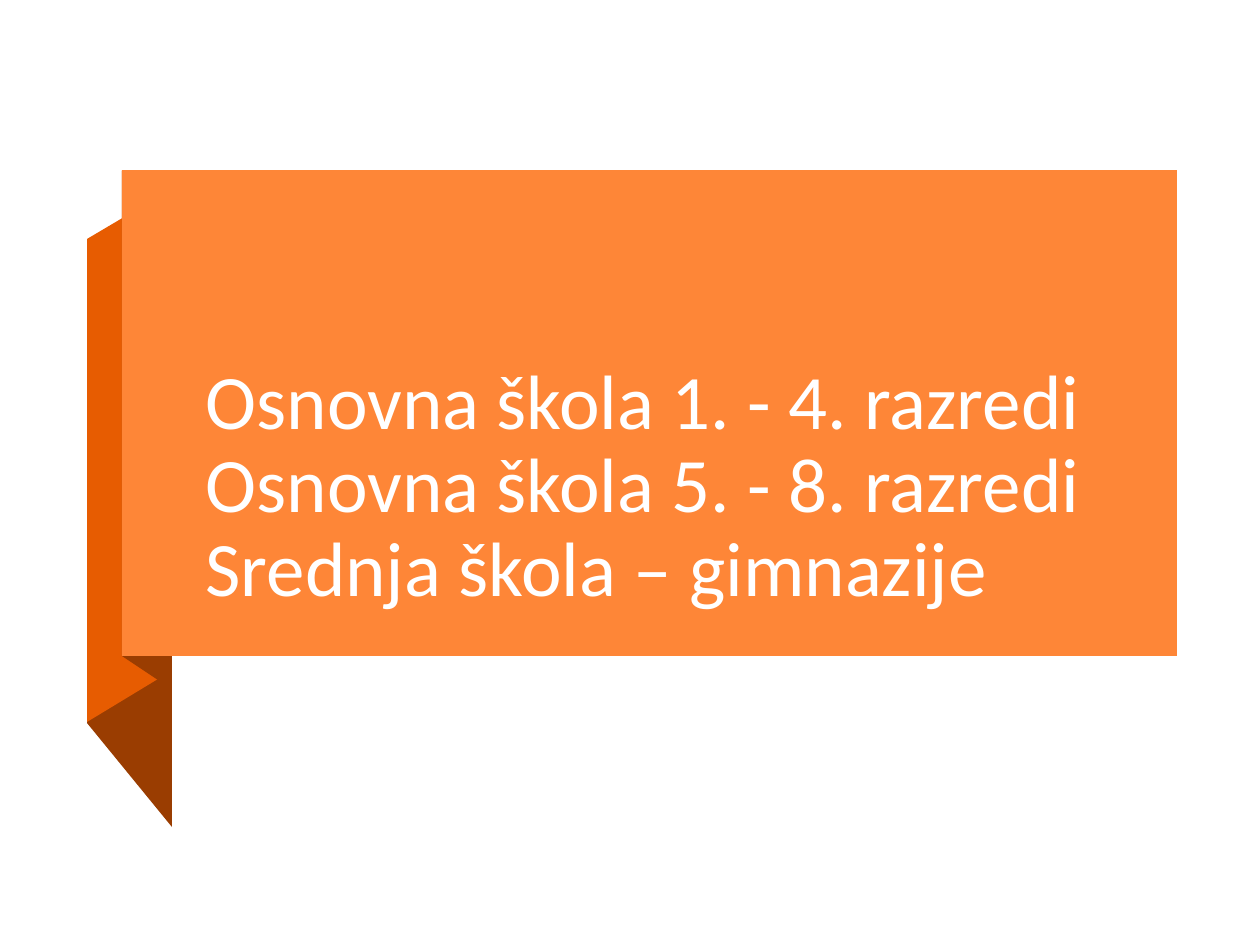
from pptx import Presentation, util as u
from pptx.dml.color import RGBColor
from pptx.enum import shapes, text

PX = u.Inches(1) / 126
ORANGE, DEEP_ORANGE, BROWN, WHITE = "FE8637", "E75C01", "9A3D01", "FFFFFF"
LEVELS = [
    "Osnovna škola 1. - 4. razredi",
    "Osnovna škola 5. - 8. razredi",
    "Srednja škola – gimnazije",
]


def px(length):
    return u.Emu(round(length * PX))


def colour(fill, value):
    fill.solid()
    fill.fore_color.rgb = RGBColor.from_string(value)


def finish(shape, value):
    shape.shadow.inherit = False
    colour(shape.fill, value)
    shape.line.fill.background()


def add_fold(slide, corners, value):
    outline = slide.shapes.build_freeform(*corners[0], scale=PX)
    outline.add_line_segments(corners[1:], close=True)
    finish(outline.convert_to_shape(), value)


def add_panel(slide, left, top, width, height, value):
    panel = slide.shapes.add_shape(
        shapes.MSO_SHAPE.RECTANGLE, px(left), px(top), px(width), px(height))
    finish(panel, value)


def set_title(slide, lines, left, top, width, height):
    title = slide.shapes.title
    title.left, title.top = px(left), px(top)
    title.width, title.height = px(width), px(height)
    slide.shapes._spTree.append(title._element)
    frame = title.text_frame
    frame.word_wrap = True
    frame.auto_size = text.MSO_AUTO_SIZE.NONE
    frame.vertical_anchor = text.MSO_ANCHOR.BOTTOM
    paragraph = frame.paragraphs[0]
    paragraph.text = "\n".join(lines)
    paragraph.alignment = text.PP_ALIGN.LEFT
    paragraph.line_spacing = 0.9
    for run in paragraph.runs:
        run.font.name = "Calibri"
        run.font.size = u.Pt(44)
        colour(run.font.fill, WHITE)


def main():
    deck = Presentation()
    deck.slide_width, deck.slide_height = px(1260), px(945)
    slide = deck.slides.add_slide(deck.slide_layouts[5])
    colour(slide.background.fill, WHITE)
    add_fold(slide, [(87, 723), (172, 827), (172, 348), (87, 243)], BROWN)
    add_fold(slide, [(87, 722), (158, 679), (158, 197), (87, 239)], DEEP_ORANGE)
    add_fold(slide, [(122, 656), (158, 680), (158, 195), (122, 171)], BROWN)
    add_panel(slide, 122, 170, 1055, 486, ORANGE)
    set_title(slide, LEVELS, 193, 222, 955, 397)
    deck.save("out.pptx")


if __name__ == "__main__":
    main()
